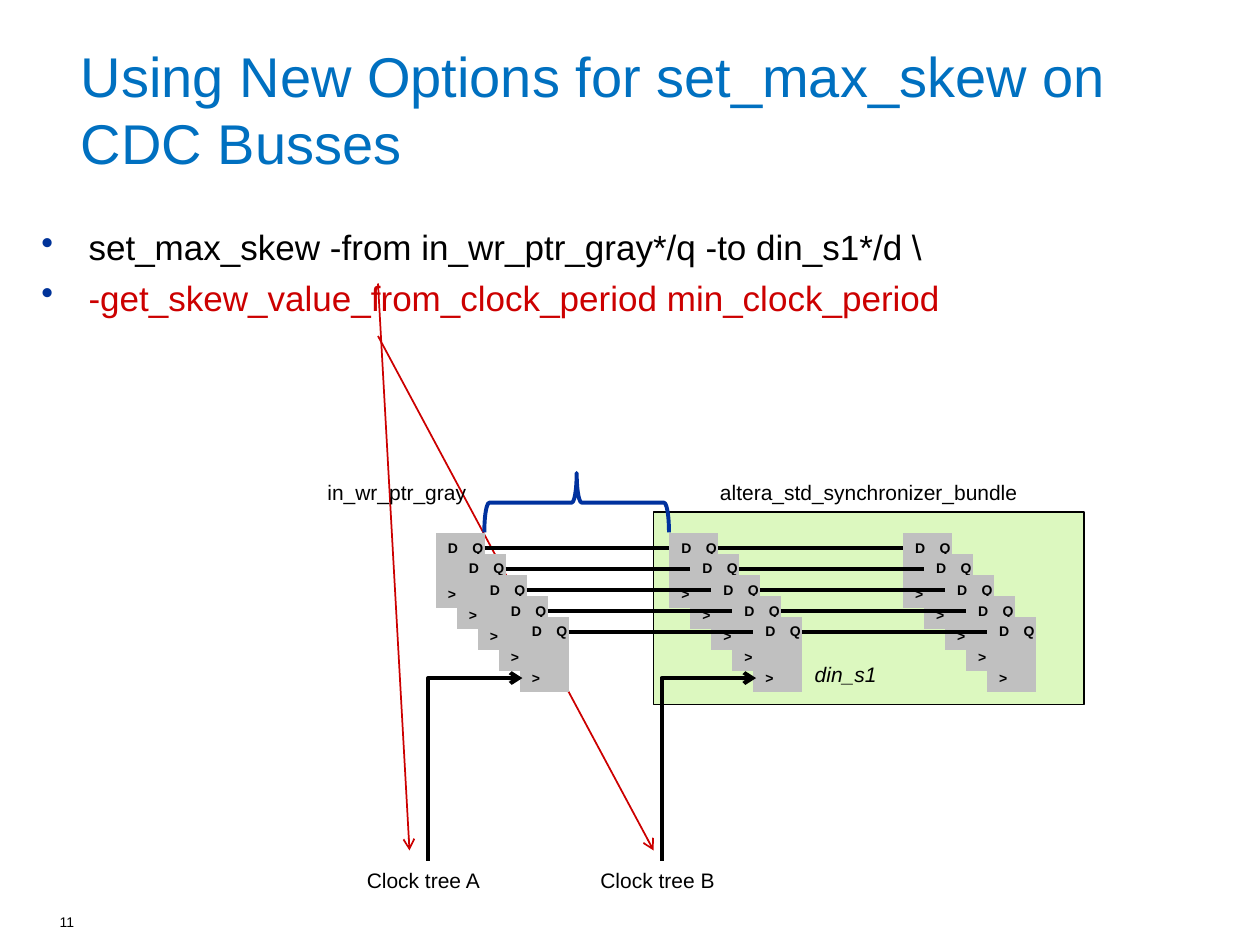
from dataclasses import dataclass

from lxml.etree import SubElement
from pptx import Presentation
from pptx.dml.color import RGBColor
from pptx.enum.shapes import MSO_CONNECTOR, MSO_SHAPE
from pptx.enum.text import MSO_ANCHOR, MSO_AUTO_SIZE, PP_ALIGN
from pptx.oxml.ns import qn
from pptx.util import Pt


@dataclass(frozen=True)
class Theme:
    face: str = "Arial"
    title: str = "0070C0"
    ink: str = "000000"
    alert: str = "CC0000"
    bullet: str = "003399"
    brace: str = "00319E"
    flop: str = "C0C0C0"
    zone: str = "DCF8BF"
    head: int = 32
    body: int = 20
    label: int = 12
    small: int = 8
    thin: float = 0.75
    fine: float = 1
    bold: float = 2.25


def color(code):
    return RGBColor.from_string(code)


class Canvas:
    def __init__(self, theme, slide):
        self.theme = theme
        self.slide = slide

    def style(self, para, tint, **font):
        values = {"name": self.theme.face, "bold": False, "italic": False, **font}
        for key, value in values.items():
            setattr(para.font, key, value)
        para.font.color.rgb = color(tint)

    def title(self, text, *box):
        shape = self.slide.shapes.title
        shape.left, shape.top, shape.width, shape.height = map(Pt, box)
        frame = shape.text_frame
        frame.text = text
        frame.auto_size = MSO_AUTO_SIZE.NONE
        frame.vertical_anchor = MSO_ANCHOR.MIDDLE
        para = frame.paragraphs[0]
        para.alignment = PP_ALIGN.LEFT
        self.style(para, self.theme.title, size=Pt(self.theme.head))

    def text(self, text, *box, size, home=None, align=PP_ALIGN.LEFT,
             wrap=True, fit=MSO_AUTO_SIZE.SHAPE_TO_FIT_TEXT, **font):
        shapes = (home or self.slide).shapes
        shape = shapes.add_textbox(*map(Pt, box))
        frame = shape.text_frame
        frame.word_wrap = wrap
        frame.auto_size = fit
        para = frame.paragraphs[0]
        para.text = text
        para.alignment = align
        self.style(para, self.theme.ink, size=Pt(size), **font)
        return shape

    def bullets(self, items, *box):
        """Write (text, color) pairs as a bulleted list with a hanging indent."""
        frame = self.slide.shapes.add_textbox(*map(Pt, box)).text_frame
        frame.word_wrap = True
        for i, (text, tint) in enumerate(items):
            para = frame.add_paragraph() if i else frame.paragraphs[0]
            para.text = text
            props = para._p.get_or_add_pPr()
            props.set("marL", str(Pt(27)))
            props.set("indent", str(-Pt(27)))
            if i:
                para.space_before = Pt(5)
            paint = SubElement(props, qn("a:buClr"))
            SubElement(paint, qn("a:srgbClr"), val=self.theme.bullet)
            SubElement(props, qn("a:buChar"), char="•")
            self.style(para, tint, size=Pt(self.theme.body))

    def shape(self, kind, *box, fill=None, line=None, width=0, turn=0, home=None):
        shape = (home or self.slide).shapes.add_shape(kind, *map(Pt, box))
        shape.shadow.inherit = False
        shape.rotation = turn
        if fill:
            shape.fill.solid()
            shape.fill.fore_color.rgb = color(fill)
        else:
            shape.fill.background()
        if line:
            shape.line.color.rgb = color(line)
            shape.line.width = Pt(width)
        else:
            shape.line.fill.background()
        return shape

    def line(self, *ends, tint, width, kind=MSO_CONNECTOR.STRAIGHT, arrow=False):
        link = self.slide.shapes.add_connector(kind, *map(Pt, ends))
        link.line.color.rgb = color(tint)
        link.line.width = Pt(width)
        if arrow:
            SubElement(link.line._get_or_add_ln(), qn("a:tailEnd"), type="arrow")
        SubElement(link._element.spPr, qn("a:effectLst"))
        return link

    def wire(self, start, end):
        """Join the right side of one box to the left side of another."""
        link = self.line(0, 0, 0, 0, tint=self.theme.ink, width=self.theme.bold)
        link.begin_connect(start, 3)
        link.end_connect(end, 1)

    def elbow(self, x, y, across, up):
        """Rise from (x, y), then turn right to an arrowhead."""
        left, top = x + (across - up) / 2, y - (up + across) / 2
        link = self.line(left + up, top + across, left, top, tint=self.theme.ink,
                         width=self.theme.bold, kind=MSO_CONNECTOR.ELBOW, arrow=True)
        props = link._element.spPr
        props.find(qn("a:xfrm")).set("rot", str(90 * 60000))
        props.find(qn("a:prstGeom")).set("prst", "bentConnector2")

    def flop(self, x, y):
        """Draw one flip-flop and return its D and Q pins."""
        group = self.slide.shapes.add_group_shape()
        self.shape(MSO_SHAPE.FLOWCHART_PROCESS, x, y, 28, 43,
                   fill=self.theme.flop, home=group)
        pins = [self.text(mark, x + dx, y + dy, 14, 17, size=self.theme.small,
                          home=group, align=PP_ALIGN.CENTER, bold=True)
                for mark, dx, dy in (("D", 0, 0), ("Q", 14, 0), (">", 0, 26.5))]
        return pins[:2]


def main():
    theme = Theme()
    deck = Presentation()
    deck.slide_width, deck.slide_height = Pt(720), Pt(540)
    art = Canvas(theme, deck.slides.add_slide(deck.slide_layouts[5]))

    for x, y, end in ((216, 162, 234), (216, 192, 373.5)):
        art.line(x, y, end, 486, tint=theme.alert, width=theme.fine, arrow=True)
    art.shape(MSO_SHAPE.RECTANGLE, 373.5, 292.5, 246, 110,
              fill=theme.zone, line=theme.ink, width=theme.thin)
    art.title("Using New Options for set_max_skew on CDC Busses", 39, 31.5, 661, 61.5)
    art.text("11", 27, 518.5, 55, 22, size=theme.small, fit=MSO_AUTO_SIZE.NONE)
    art.bullets([
        ("set_max_skew -from in_wr_ptr_gray*/q -to din_s1*/d \\", theme.ink),
        ("-get_skew_value_from_clock_period min_clock_period", theme.alert),
    ], 16.5, 125.5, 683, 326)

    left, top, gap, step, count = 249, 304.5, 133.5, 12, 5
    banks = [[art.flop(left + gap * bank + step * row, top + step * row)
              for row in range(count)] for bank in range(3)]
    for near, far in zip(banks, banks[1:]):
        for (_, out), (pin, _) in zip(near, far):
            art.wire(out, pin)

    for i, name in enumerate("AB"):
        art.text(f"Clock tree {name}", 202.5 + gap * i, 492, 84, 21.5, size=theme.label)
        art.elbow(244.5 + gap * i, 492, 54, 104.5)
    art.shape(MSO_SHAPE.LEFT_BRACE, 312.5, 234.5, 34, 105.5,
              line=theme.brace, width=theme.bold, turn=90)

    art.text("altera_std_synchronizer_bundle", 373.5, 270.5, 246, 21.5,
             size=theme.label, align=PP_ALIGN.CENTER)
    art.text("din_s1", 458.5, 374.5, 50, 21.5, size=theme.label, wrap=False, italic=True)
    art.text("in_wr_ptr_gray", 180, 270.5, 125, 21.5, size=theme.label)
    deck.save("out.pptx")


if __name__ == "__main__":
    main()
